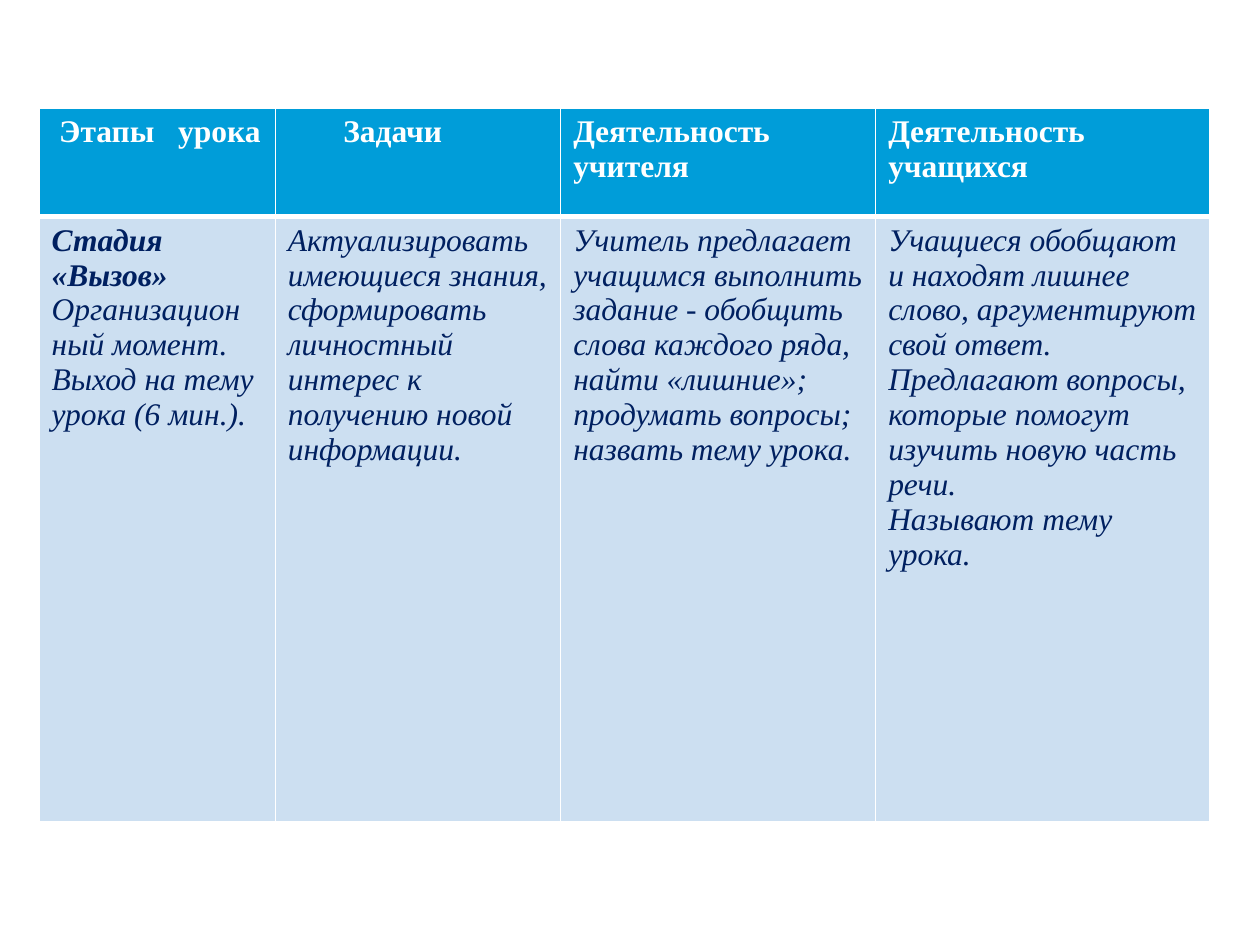
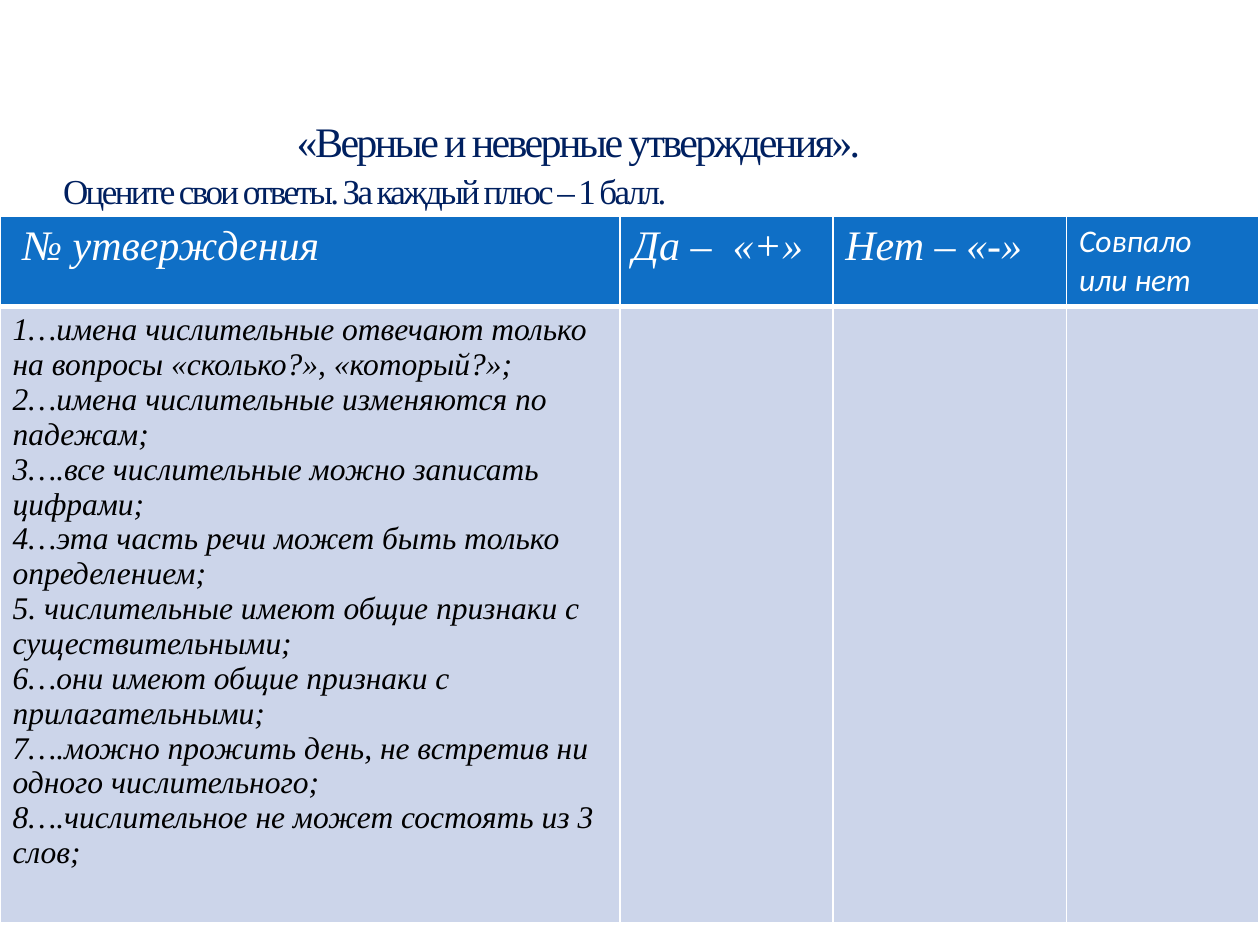
from dataclasses import dataclass, replace

from lxml.etree import SubElement
from pptx import Presentation
from pptx.dml.color import RGBColor
from pptx.enum.text import MSO_ANCHOR, MSO_AUTO_SIZE, PP_ALIGN
from pptx.oxml.ns import qn
from pptx.util import Inches, Pt

WIDTH, HEIGHT = Inches(10), Inches(7.5)
TITLE_ONLY, BLANK = 5, 6

WHITE = RGBColor(0xFF, 0xFF, 0xFF)
BLACK = RGBColor(0x00, 0x00, 0x00)
NAVY = RGBColor(0x00, 0x20, 0x60)
SKY = RGBColor(0x00, 0x9D, 0xD9)
PALE_SKY = RGBColor(0xCC, 0xDF, 0xF1)
ROYAL = RGBColor(0x0F, 0x6F, 0xC6)
PALE_ROYAL = RGBColor(0xCC, 0xD5, 0xEA)

SERIF, SANS = "Times New Roman", "Calibri"
THIN, THICK = Pt(1), Pt(3)


@dataclass(frozen=True)
class Style:
    color: RGBColor
    size: float = 18
    face: str = SERIF
    bold: bool = False
    italic: bool = True
    tracking: float = 0


@dataclass(frozen=True)
class Line:
    text: str
    style: Style
    indent: float = 0
    last_gap: float = 0


@dataclass(frozen=True)
class Grid:
    left: float
    top: float
    columns: tuple[float, ...]
    rows: tuple[float, ...]
    header_fill: RGBColor
    body_fill: RGBColor
    header: tuple[Line, ...]
    body: tuple[tuple[Line, ...], ...]


STAGE_HEAD = Style(WHITE, bold=True, italic=False)
STAGE_NAME = Style(NAVY, bold=True)
STAGE_TEXT = Style(NAVY)
ANSWER_HEAD = Style(WHITE, size=24)
MATCH_HEAD = Style(WHITE, face=SANS)
STATEMENT = Style(BLACK)
HEADING = Style(NAVY, size=24, italic=False, tracking=-1.5)
SUBHEADING = Style(NAVY, size=20, italic=False, tracking=-1.5)


def across(percent: float) -> int:
    return round(WIDTH * percent / 100)


def down(percent: float) -> int:
    return round(HEIGHT * percent / 100)


def lines(style: Style, *texts: str) -> tuple[Line, ...]:
    return tuple(Line(text, style) for text in texts)


LESSON_STAGES = Grid(
    left=3.1, top=11.47,
    columns=(18.75, 22.65, 25, 26.55), rows=(11.47, 64),
    header_fill=SKY, body_fill=PALE_SKY,
    header=(
        Line("Этапы урока", STAGE_HEAD, indent=0.6, last_gap=9),
        Line("Задачи", STAGE_HEAD, indent=4.4),
        Line("Деятельность учителя", STAGE_HEAD),
        Line("Деятельность учащихся", STAGE_HEAD),
    ),
    body=(
        lines(STAGE_NAME, "Стадия «Вызов»")
        + lines(STAGE_TEXT, "Организацион", "ный момент.",
                "Выход на тему урока (6 мин.)."),
        lines(STAGE_TEXT,
              "Актуализировать имеющиеся знания, сформировать личностный "
              "интерес к получению новой информации."),
        lines(STAGE_TEXT,
              "Учитель предлагает учащимся выполнить задание - обобщить слова "
              "каждого ряда, найти «лишние»; продумать вопросы;",
              "назвать тему урока."),
        lines(STAGE_TEXT,
              "Учащиеся обобщают и находят лишнее слово, аргументируют свой ответ.",
              "Предлагают вопросы, которые помогут изучить новую часть речи.",
              "Называют тему урока."),
    ),
)

STATEMENTS = Grid(
    left=0, top=22.93,
    columns=(49.2, 16.9, 18.55, 15.25), rows=(9.47, 65.2),
    header_fill=ROYAL, body_fill=PALE_ROYAL,
    header=(
        Line("№ утверждения", ANSWER_HEAD, indent=0.8),
        Line("Да – «+»", ANSWER_HEAD, last_gap=6),
        Line("Нет – «-»", ANSWER_HEAD),
        Line("Совпало или нет", MATCH_HEAD),
    ),
    body=(
        lines(STATEMENT,
              "1…имена числительные отвечают только на вопросы «сколько?», «который?»;",
              "2…имена числительные изменяются по падежам;",
              "3….все числительные можно записать цифрами;",
              "4…эта часть речи может быть только определением;",
              "5. числительные имеют общие признаки с существительными;",
              "6…они имеют общие признаки с прилагательными;",
              "7….можно прожить день, не встретив ни одного числительного;",
              "8….числительное не может состоять из 3 слов;"),
        (), (), (),
    ),
)

TITLE_LINES = (
    Line("«Верные и неверные утверждения».", HEADING, indent=19.35),
    Line("Оцените свои ответы. За каждый плюс – 1 балл.", SUBHEADING, indent=0.8),
)


def add_run(paragraph, text: str, style: Style) -> None:
    run = paragraph.add_run()
    run.text = text
    font = run.font
    font.name, font.size = style.face, Pt(style.size)
    font.bold, font.italic = style.bold, style.italic
    font.color.rgb = style.color
    if style.tracking:
        run._r.get_or_add_rPr().set("spc", str(round(style.tracking * 100)))


def write(frame, content: tuple[Line, ...], spacing: float = 1, gap: float = 0) -> None:
    for number, line in enumerate(content):
        paragraph = frame.add_paragraph() if number else frame.paragraphs[0]
        paragraph.alignment = PP_ALIGN.LEFT
        paragraph.line_spacing = spacing
        paragraph.space_before = Pt(gap if number else 0)
        properties = paragraph._p.get_or_add_pPr()
        properties.set("marL", str(across(line.indent)))
        properties.set("indent", "0")
        if line.last_gap:
            start, space, end = line.text.rpartition(" ")
            add_run(paragraph, start, line.style)
            add_run(paragraph, space, replace(line.style, tracking=line.last_gap))
            add_run(paragraph, end, line.style)
        else:
            add_run(paragraph, line.text, line.style)


def paint(cell, fill: RGBColor, top: int, bottom: int) -> None:
    properties = cell._tc.get_or_add_tcPr()
    for side, width in (("L", THIN), ("R", THIN), ("T", top), ("B", bottom)):
        border = SubElement(properties, qn(f"a:ln{side}"), w=str(width))
        solid = SubElement(border, qn("a:solidFill"))
        SubElement(solid, qn("a:srgbClr"), val=str(WHITE))
    cell.fill.solid()
    cell.fill.fore_color.rgb = fill


def draw_grid(slide, grid: Grid) -> None:
    table = slide.shapes.add_table(
        len(grid.rows), len(grid.columns), across(grid.left), down(grid.top),
        across(sum(grid.columns)), down(sum(grid.rows))).table
    table.horz_banding = False
    for column, share in zip(table.columns, grid.columns):
        column.width = across(share)
    for row, share in zip(table.rows, grid.rows):
        row.height = down(share)
    for index, (head, content) in enumerate(zip(grid.header, grid.body)):
        head_cell, body_cell = table.cell(0, index), table.cell(1, index)
        paint(head_cell, grid.header_fill, THIN, THICK)
        paint(body_cell, grid.body_fill, THICK, THIN)
        write(head_cell.text_frame, (head,))
        write(body_cell.text_frame, content)


def draw_title(slide, content: tuple[Line, ...]) -> None:
    title = slide.shapes.title
    title.left, title.top = across(4.2), down(3.33)
    title.width, title.height = across(91.7), down(24.27)
    frame = title.text_frame
    frame.word_wrap = True
    frame.auto_size = MSO_AUTO_SIZE.NONE
    frame.vertical_anchor = MSO_ANCHOR.BOTTOM
    frame.margin_left = frame.margin_right = frame.margin_top = 0
    frame.margin_bottom = down(5.2)
    write(frame, content, spacing=0.9, gap=4)


def main() -> None:
    deck = Presentation()
    deck.slide_width, deck.slide_height = WIDTH, HEIGHT
    stages = deck.slides.add_slide(deck.slide_layouts[BLANK])
    draw_grid(stages, LESSON_STAGES)
    check = deck.slides.add_slide(deck.slide_layouts[TITLE_ONLY])
    draw_title(check, TITLE_LINES)
    draw_grid(check, STATEMENTS)
    deck.save("out.pptx")


if __name__ == "__main__":
    main()
